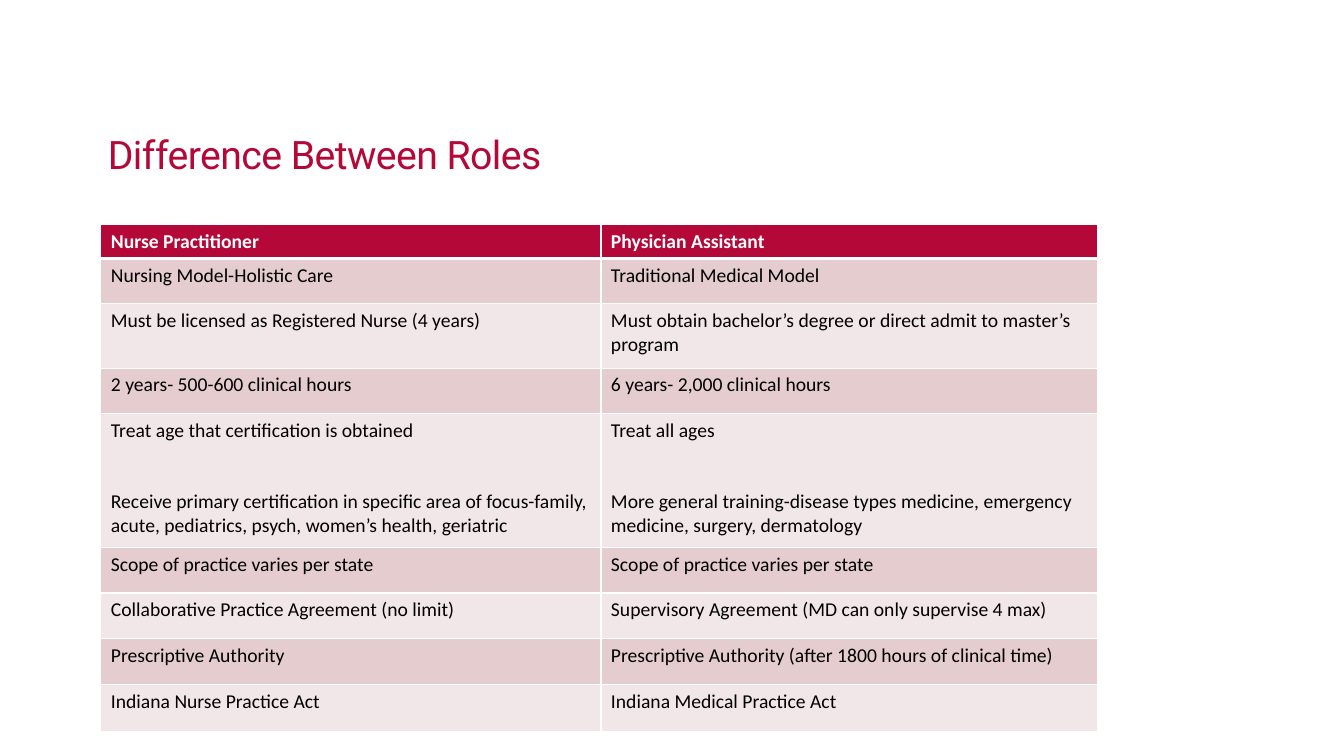
from lxml.etree import SubElement
from pptx import Presentation
from pptx.dml.color import RGBColor
from pptx.enum.text import MSO_ANCHOR
from pptx.oxml.ns import qn
from pptx.util import Inches, Pt

RED = RGBColor(0xB3, 0x08, 0x38)
ROSE = RGBColor(0xE5, 0xCC, 0xCE)
PALE = RGBColor(0xF2, 0xE7, 0xE8)
WHITE = RGBColor(0xFF, 0xFF, 0xFF)
BLACK = RGBColor(0, 0, 0)

COLS = [4.96, 4.93]
ROWS = [
    (0.22, ["Nurse Practitioner"], ["Physician Assistant"]),
    (0.45, ["Nursing Model-Holistic Care"], ["Traditional Medical Model"]),
    (0.64, ["Must be licensed as Registered Nurse (4 years)"],
     ["Must obtain bachelor’s degree or direct admit to master’s program"]),
    (0.45, ["2 years- 500-600 clinical hours"], ["6 years- 2,000 clinical hours"]),
    (1.33, ["Treat age that certification is obtained",
            "Receive primary certification in specific area of focus-family, "
            "acute, pediatrics, psych, women’s health, geriatric"],
     ["Treat all ages",
      "More general training-disease types medicine, emergency medicine, "
      "surgery, dermatology"]),
    (0.45, ["Scope of practice varies per state"],
     ["Scope of practice varies per state"]),
    (0.45, ["Collaborative Practice Agreement (no limit)"],
     ["Supervisory Agreement (MD can only supervise 4 max)"]),
    (0.46, ["Prescriptive Authority"],
     ["Prescriptive Authority (after 1800 hours of clinical time)"]),
    (0.46, ["Indiana Nurse Practice Act"], ["Indiana Medical Practice Act"]),
]


def add_run(para, text, font, size, color, bold=False):
    run = para.add_run()
    run.text = text
    run.font.name = font
    run.font.size = Pt(size)
    run.font.color.rgb = color
    run.font.bold = bold
    return run


def add_title(slide, left, top, width, height):
    box = slide.shapes.add_textbox(*map(Inches, (left, top, width, height)))
    frame = box.text_frame
    frame.word_wrap = True
    frame.vertical_anchor = MSO_ANCHOR.MIDDLE
    frame.margin_left = frame.margin_right = 0
    frame.margin_top = frame.margin_bottom = 0
    para = frame.paragraphs[0]
    para.line_spacing = 0.9
    run = add_run(para, "Difference Between Roles", "Roboto", 28, RED)
    run.font._element.set("spc", "-40")


def add_border(cell, side, width):
    props = cell._tc.get_or_add_tcPr()
    line = SubElement(props, qn(f"a:ln{side}"), w=str(Pt(width)))
    fill = SubElement(line, qn("a:solidFill"))
    SubElement(fill, qn("a:srgbClr"), val=str(WHITE))


def fill_cell(cell, texts, row):
    head = row == 0
    for side in "LRTB":
        thick = (head and side == "B") or (row == 1 and side == "T")
        add_border(cell, side, 3 if thick else 1)
    cell.fill.solid()
    cell.fill.fore_color.rgb = RED if head else ROSE if row % 2 else PALE
    frame = cell.text_frame
    for i, text in enumerate(texts):
        para = frame.add_paragraph() if i else frame.paragraphs[0]
        if i:
            para.space_before = Pt(34)
        add_run(para, text, "Calibri", 14, WHITE if head else BLACK, head)


def add_roles(slide, left, top, width, height):
    frame = slide.shapes.add_table(
        len(ROWS), len(COLS), *map(Inches, (left, top, width, height)))
    table = frame.table
    for col, size in zip(table.columns, COLS):
        col.width = Inches(size)
    for i, (size, *texts) in enumerate(ROWS):
        table.rows[i].height = Inches(size)
        for j, text in enumerate(texts):
            fill_cell(table.cell(i, j), text, i)


def main():
    deck = Presentation()
    deck.slide_width, deck.slide_height = Inches(13.33), Inches(7.5)
    slide = deck.slides.add_slide(deck.slide_layouts[6])
    add_title(slide, 1.07, 1.02, 10.57, 1.07)
    add_roles(slide, 1, 2.23, sum(COLS), sum(row[0] for row in ROWS))
    deck.save("out.pptx")


if __name__ == "__main__":
    main()
